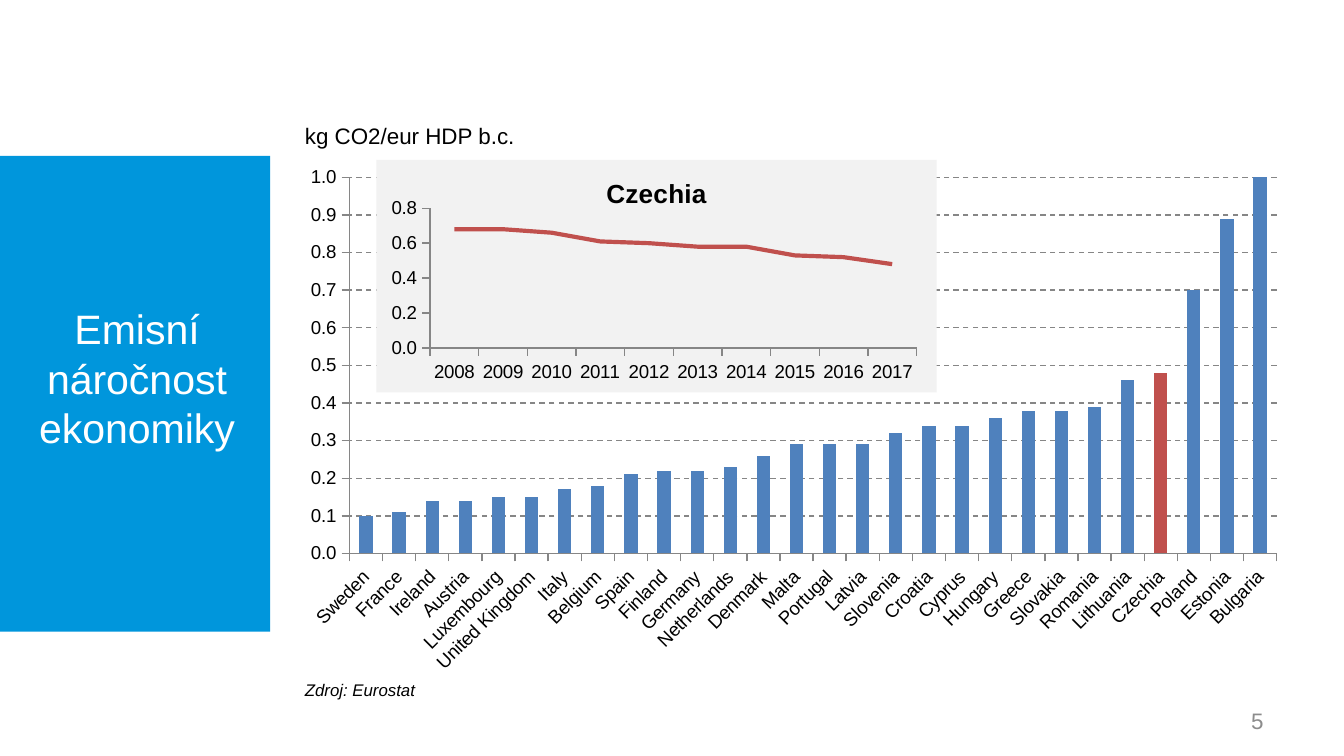
from lxml import etree
from pptx import Presentation
from pptx.chart.data import CategoryChartData
from pptx.dml.color import RGBColor
from pptx.enum.chart import XL_CHART_TYPE as ChartType, XL_TICK_MARK as TickMark
from pptx.enum.dml import MSO_LINE_DASH_STYLE as Dash
from pptx.enum.shapes import MSO_SHAPE as Shape
from pptx.enum.text import MSO_ANCHOR as Anchor, PP_ALIGN as Align
from pptx.oxml import parse_xml
from pptx.oxml.ns import nsdecls, qn
from pptx.util import Inches, Pt

FONT = "Arial"
BLUE, RED, AXIS_GRAY = "4F81BD", "C0504D", "868686"

COUNTRIES = {
    "Sweden": 0.1, "France": 0.11, "Ireland": 0.14, "Austria": 0.14,
    "Luxembourg": 0.15, "United Kingdom": 0.15, "Italy": 0.17,
    "Belgium": 0.18, "Spain": 0.21, "Finland": 0.22, "Germany": 0.22,
    "Netherlands": 0.23, "Denmark": 0.26, "Malta": 0.29, "Portugal": 0.29,
    "Latvia": 0.29, "Slovenia": 0.32, "Croatia": 0.34, "Cyprus": 0.34,
    "Hungary": 0.36, "Greece": 0.38, "Slovakia": 0.38, "Romania": 0.39,
    "Lithuania": 0.46, "Czechia": 0.48, "Poland": 0.7, "Estonia": 0.89,
    "Bulgaria": 1,
}
CZECH_TREND = [0.68, 0.68, 0.66, 0.61, 0.6, 0.58, 0.58, 0.53, 0.52, 0.48]


def color(hex_value):
    return RGBColor.from_string(hex_value)


def place(shape, left, top, width, height):
    shape.left, shape.top = Inches(left), Inches(top)
    shape.width, shape.height = Inches(width), Inches(height)


def format_font(font, size, hex_value="000000", bold=False, italic=False):
    font.name, font.size = FONT, Pt(size)
    font.bold, font.italic = bold, italic
    font.color.rgb = color(hex_value)


def write(frame, text, align=Align.LEFT, anchor=Anchor.TOP, **font_format):
    frame.word_wrap = True
    frame.vertical_anchor = anchor
    paragraph = frame.paragraphs[0]
    paragraph.alignment = align
    run = paragraph.add_run()
    run.text = text
    format_font(run.font, **font_format)


def add_label(slide, box, text, **text_format):
    label = slide.shapes.add_textbox(*map(Inches, box))
    write(label.text_frame, text, **text_format)


def add_title_panel(slide):
    panel = slide.shapes.add_shape(
        Shape.RECTANGLE, *map(Inches, (-0.12, 1.16, 2.13, 3.54)))
    panel.shadow.inherit = False
    panel.fill.solid()
    panel.fill.fore_color.rgb = color("0096DC")
    panel.line.fill.background()

    title = slide.shapes.title
    title._element.addprevious(panel._element)
    place(title, 0.03, 1.71, 1.98, 2.2)
    write(title.text_frame, "Emisní náročnost ekonomiky", align=Align.CENTER,
          anchor=Anchor.MIDDLE, size=22, hex_value="FFFFFF")


def set_plot_layout(chart, box, plot_box):
    left, top, width, height = box
    plot_left, plot_top, plot_width, plot_height = plot_box
    plot_area = chart._chartSpace.chart.plotArea
    for old_layout in plot_area.findall(qn("c:layout")):
        plot_area.remove(old_layout)
    layout = etree.Element(qn("c:layout"))
    manual = etree.SubElement(layout, qn("c:manualLayout"))
    settings = {
        "layoutTarget": "inner", "xMode": "edge", "yMode": "edge",
        "x": (plot_left - left) / width, "y": (plot_top - top) / height,
        "w": plot_width / width, "h": plot_height / height,
    }
    for tag, value in settings.items():
        etree.SubElement(manual, qn(f"c:{tag}")).set("val", str(value))
    plot_area.insert(0, layout)


def fill_chart(chart, hex_value):
    chart._chartSpace.chart.addnext(parse_xml(
        f'<c:spPr {nsdecls("c", "a")}><a:solidFill><a:srgbClr val="{hex_value}"/>'
        '</a:solidFill><a:ln><a:noFill/></a:ln></c:spPr>'))


def add_chart(slide, kind, box, plot_box, name, categories, values, maximum, step):
    data = CategoryChartData()
    data.categories = categories
    data.add_series(name, values)
    chart = slide.shapes.add_chart(kind, *map(Inches, box), data).chart
    chart.has_legend = chart.has_title = False
    format_font(chart.font, 10)
    chart.plots[0].vary_by_categories = False

    value_axis = chart.value_axis
    value_axis.minimum_scale, value_axis.maximum_scale = 0, maximum
    value_axis.major_unit = step
    value_axis.has_major_gridlines = False
    value_axis.tick_labels.number_format = "#,##0.0"
    value_axis.tick_labels.number_format_is_linked = False
    for axis in (chart.category_axis, value_axis):
        axis.major_tick_mark = TickMark.OUTSIDE
        axis.minor_tick_mark = TickMark.NONE
        axis.format.line.color.rgb = color(AXIS_GRAY)
        axis.format.line.width = Pt(0.75)
    set_plot_layout(chart, box, plot_box)
    return chart


def add_country_chart(slide):
    chart = add_chart(
        slide, ChartType.COLUMN_CLUSTERED, (2.17, 1.16, 7.48, 3.92),
        (2.6, 1.32, 6.9, 2.8), "Series 1",
        list(COUNTRIES), list(COUNTRIES.values()), 1, 0.1)
    chart.plots[0].gap_width = 150
    gridlines = chart.value_axis.major_gridlines.format.line
    gridlines.color.rgb = color(AXIS_GRAY)
    gridlines.width = Pt(0.75)
    gridlines.dash_style = Dash.DASH

    country_names = chart.category_axis
    format_font(country_names.tick_labels.font, 10)
    country_names._element.find(
        f'{qn("c:txPr")}/{qn("a:bodyPr")}').set("rot", "-2700000")

    columns = chart.plots[0].series[0]
    czechia = columns.points[list(COUNTRIES).index("Czechia")]
    for part, hex_value in ((columns, BLUE), (czechia, RED)):
        part.format.fill.solid()
        part.format.fill.fore_color.rgb = color(hex_value)


def add_trend_chart(slide):
    years = [str(year) for year in range(2008, 2018)]
    chart = add_chart(
        slide, ChartType.LINE, (2.8, 1.19, 4.17, 1.73), (3.2, 1.55, 3.62, 1.04),
        "Czechia", years, CZECH_TREND, 0.8, 0.2)
    write(chart.chart_title.text_frame, "Czechia", align=Align.CENTER,
          size=14, bold=True)
    chart.chart_title.include_in_layout = False
    fill_chart(chart, "F2F2F2")
    trend = chart.plots[0].series[0]
    trend.smooth = False
    trend.format.line.color.rgb = color(RED)
    trend.format.line.width = Pt(2.25)


def main():
    deck = Presentation()
    deck.slide_width = Inches(10)
    deck.slide_height = deck.slide_width * 9 // 16
    slide = deck.slides.add_slide(deck.slide_layouts[5])
    add_title_panel(slide)
    add_label(slide, (7.17, 5.21, 2.33, 0.3), "5", align=Align.RIGHT,
              anchor=Anchor.MIDDLE, size=12, hex_value="8C8C8C")
    add_country_chart(slide)
    add_trend_chart(slide)
    add_label(slide, (2.17, 0.86, 2.68, 0.3), "kg CO2/eur HDP b.c.", size=12)
    add_label(slide, (2.17, 5.01, 5.04, 0.25), "Zdroj: Eurostat", size=9, italic=True)
    deck.save("out.pptx")


if __name__ == "__main__":
    main()
